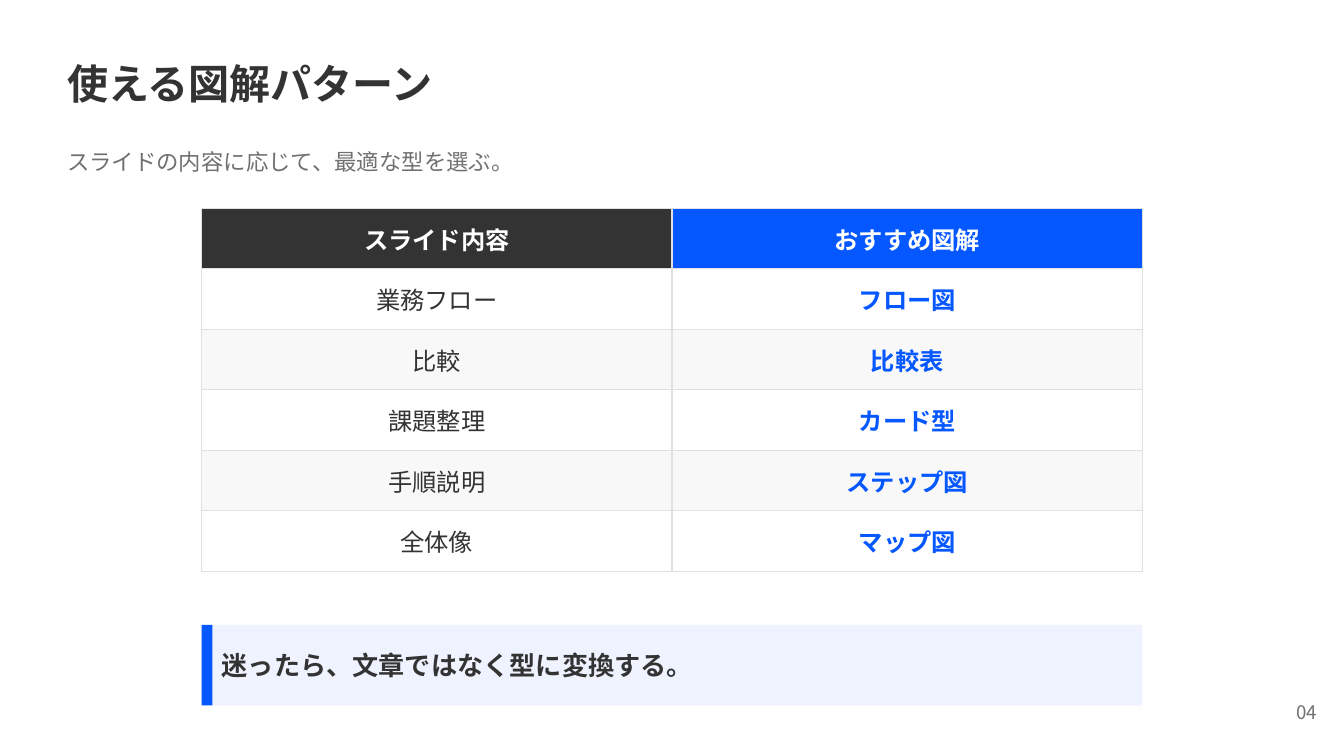
from lxml import etree
from pptx import Presentation
from pptx.dml.color import RGBColor
from pptx.enum.shapes import MSO_SHAPE
from pptx.enum.text import MSO_ANCHOR, PP_ALIGN
from pptx.oxml.ns import qn
from pptx.util import Pt

PX = 4572  # EMU per px, 200 px to the inch
FONT = "Noto Sans CJK JP"
RECT = MSO_SHAPE.RECTANGLE
MIDDLE = MSO_ANCHOR.MIDDLE
LEFT, CENTER, RIGHT = PP_ALIGN.LEFT, PP_ALIGN.CENTER, PP_ALIGN.RIGHT

INK = RGBColor(0x33, 0x33, 0x33)
GRAY = RGBColor(0x70, 0x70, 0x70)
BLUE = RGBColor(0x05, 0x57, 0xFF)
PALE = RGBColor(0xEE, 0xF3, 0xFF)
BAND = RGBColor(0xF8, 0xF8, 0xF8)
RULE = RGBColor(0xE0, 0xE0, 0xE0)
WHITE = RGBColor(0xFF, 0xFF, 0xFF)

HEAD = ("スライド内容", "おすすめ図解")
ROWS = [
    ("業務フロー", "フロー図"),
    ("比較", "比較表"),
    ("課題整理", "カード型"),
    ("手順説明", "ステップ図"),
    ("全体像", "マップ図"),
]


def scale(*lengths):
    return [n * PX for n in lengths]


def set_text(frame, text, size, color, bold=False, align=LEFT):
    frame.text = text
    para = frame.paragraphs[0]
    para.alignment = align
    run = para.runs[0]
    font = run.font
    font.name = FONT
    font.size = Pt(size)
    font.bold = bold
    font.color.rgb = color
    # Japanese glyphs take the East Asian typeface
    etree.SubElement(font._element, qn("a:ea"), typeface=FONT)


def add_text(slide, box, text, size, color, bold=False, align=LEFT):
    frame = slide.shapes.add_textbox(*scale(*box)).text_frame
    frame.word_wrap = True
    frame.vertical_anchor = MIDDLE
    frame.margin_left = frame.margin_right = 0
    frame.margin_top = frame.margin_bottom = 0
    set_text(frame, text, size, color, bold, align)


def add_rect(slide, box, color):
    rect = slide.shapes.add_shape(RECT, *scale(*box))
    rect.shadow.inherit = False
    rect.fill.solid()
    rect.fill.fore_color.rgb = color
    rect.line.fill.background()


def set_border(cell):
    props = cell._tc.get_or_add_tcPr()
    for i, side in enumerate(("lnL", "lnR", "lnT", "lnB")):
        line = etree.Element(qn(f"a:{side}"), w=str(Pt(0.75)))
        fill = etree.SubElement(line, qn("a:solidFill"))
        etree.SubElement(fill, qn("a:srgbClr"), val=str(RULE))
        props.insert(i, line)


def set_cell(cell, text, color, fill, bold):
    cell.vertical_anchor = MIDDLE
    cell.fill.solid()
    cell.fill.fore_color.rgb = fill
    set_border(cell)
    set_text(cell.text_frame, text, 13, color, bold, CENTER)


def add_grid(slide, box):
    shape = slide.shapes.add_table(len(ROWS) + 1, len(HEAD), *scale(*box))
    table = shape.table
    # Header
    for col, fill in enumerate((INK, BLUE)):
        set_cell(table.cell(0, col), HEAD[col], WHITE, fill, True)
    # Body, with every second row shaded
    for row, (topic, chart) in enumerate(ROWS, 1):
        fill = WHITE if row % 2 else BAND
        set_cell(table.cell(row, 0), topic, INK, fill, False)
        set_cell(table.cell(row, 1), chart, BLUE, fill, True)


def main():
    prs = Presentation()
    prs.slide_width, prs.slide_height = scale(2000, 1125)
    slide = prs.slides.add_slide(prs.slide_layouts[6])

    # Title and lead
    add_text(slide, (100, 64, 1800, 120), "使える図解パターン", 22, INK, True)
    add_text(slide, (100, 200, 1800, 80),
             "スライドの内容に応じて、最適な型を選ぶ。", 12, GRAY)

    # Pattern table
    add_grid(slide, (300, 310, 1400, 540))

    # Key message
    add_rect(slide, (300, 930, 1400, 120), PALE)
    add_rect(slide, (300, 930, 16, 120), BLUE)
    add_text(slide, (330, 930, 1360, 120),
             "迷ったら、文章ではなく型に変換する。", 14, INK, True)

    # Page number
    add_text(slide, (1860, 1030, 100, 60), "04", 10, GRAY, align=RIGHT)

    prs.save("out.pptx")


if __name__ == "__main__":
    main()
